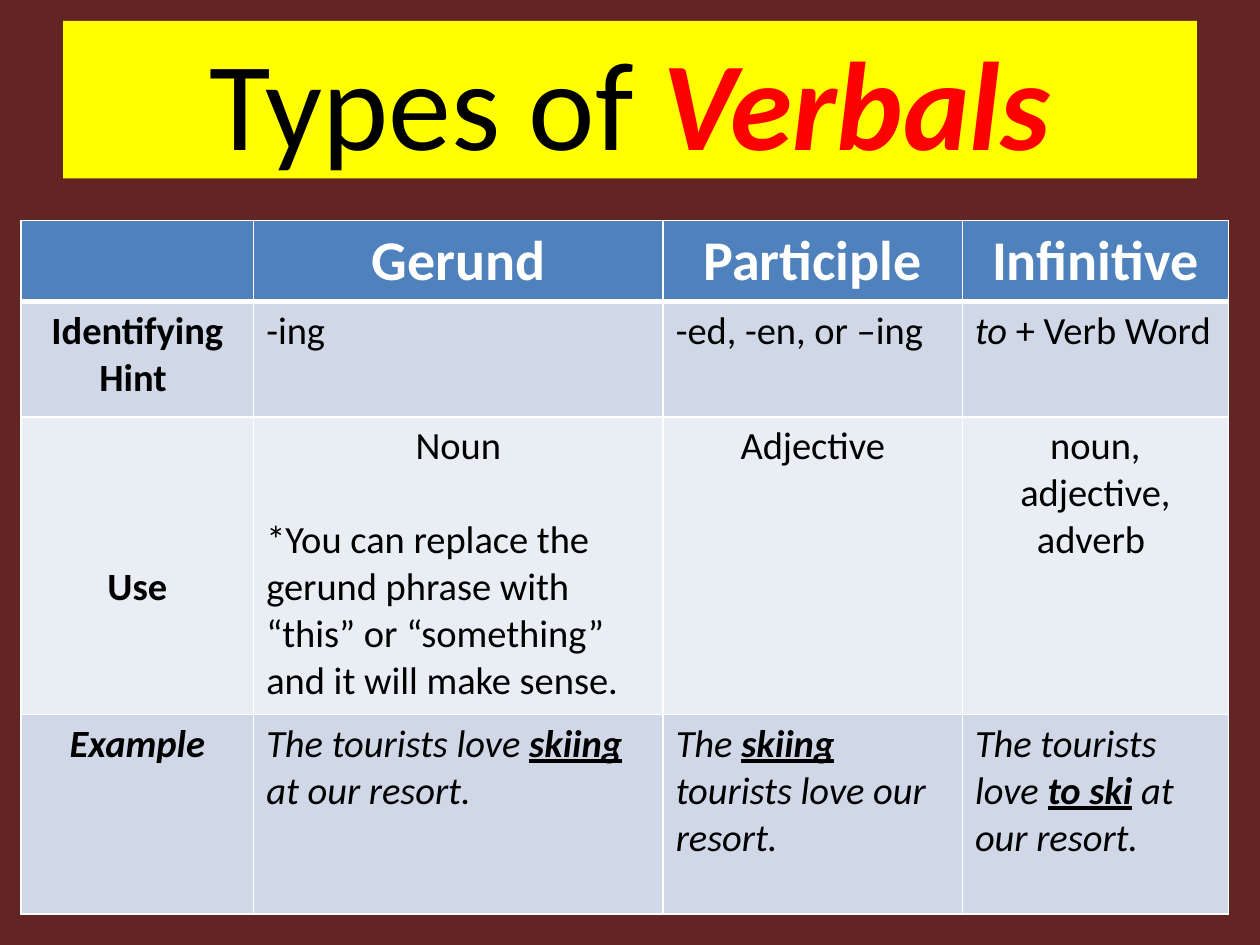
import pptx
import pptx.dml.color
import pptx.enum.text
import pptx.oxml
import pptx.oxml.ns
import pptx.util

Pt = pptx.util.Pt
RGBColor = pptx.dml.color.RGBColor
CENTER = pptx.enum.text.PP_ALIGN.CENTER
LEFT = pptx.enum.text.PP_ALIGN.LEFT
MIDDLE = pptx.enum.text.MSO_ANCHOR.MIDDLE

MAROON = RGBColor(0x63, 0x25, 0x23)
YELLOW = RGBColor(0xFF, 0xFF, 0x00)
RED = RGBColor(0xFF, 0x00, 0x00)
BLACK = RGBColor(0x00, 0x00, 0x00)
WHITE = RGBColor(0xFF, 0xFF, 0xFF)
BLUE = RGBColor(0x4F, 0x81, 0xBD)
BAND_DARK = RGBColor(0xD0, 0xD8, 0xE8)
BAND_LIGHT = RGBColor(0xE9, 0xED, 0xF4)

LINE_HEIGHT = 26.8  # one line of 22 pt body text


def add_runs(paragraph, runs, size, color):
    """Add (text, style) runs; style letters are b, i and u."""
    for text, style in runs:
        run = paragraph.add_run()
        run.text = text
        run.font.name = "Calibri"
        run.font.size = Pt(size)
        run.font.color.rgb = color
        run.font.bold = "b" in style
        run.font.italic = "i" in style
        run.font.underline = "u" in style


def set_borders(cell, widths):
    """Draw white borders; widths maps the sides L, R, T, B to points."""
    for side, width in widths.items():
        cell._tc.get_or_add_tcPr().append(pptx.oxml.parse_xml(
            f'<a:ln{side} {pptx.oxml.ns.nsdecls("a")} w="{Pt(width)}">'
            f'<a:solidFill><a:srgbClr val="{WHITE}"/></a:solidFill></a:ln{side}>'))


presentation = pptx.Presentation()
presentation.slide_width = Pt(720)
presentation.slide_height = Pt(540)
slide = presentation.slides.add_slide(presentation.slide_layouts[5])
slide.background.fill.solid()
slide.background.fill.fore_color.rgb = MAROON

title = slide.shapes.title
title.left, title.top, title.width, title.height = Pt(36), Pt(12), Pt(648), Pt(90)
title.fill.solid()
title.fill.fore_color.rgb = YELLOW
title.text_frame.vertical_anchor = MIDDLE
title.text_frame.auto_size = pptx.enum.text.MSO_AUTO_SIZE.NONE
heading = title.text_frame.paragraphs[0]
heading.alignment = CENTER
add_runs(heading, [("Types of ", "")], 72, BLACK)
add_runs(heading, [("Verbals", "bi")], 72, RED)

# Each cell is a list of paragraphs: (alignment, runs)
rows = [
    [[]] + [[(CENTER, [(verbal, "b")])] for verbal in ("Gerund", "Participle", "Infinitive")],
    [
        [(CENTER, [("Identifying Hint ", "b")])],
        [(LEFT, [("-ing", "")])],
        [(LEFT, [("-ed, -en, or –ing", "")])],
        [(LEFT, [("to ", "i"), ("+ Verb Word", "")])],
    ],
    [
        [(CENTER, [("Use", "b")])],
        [(CENTER, [("Noun", "")]),
         (LEFT, [("*You can replace the gerund phrase with “this” or “something” "
                  "and it will make sense.", "")])],
        [(CENTER, [("Adjective", "")])],
        [(CENTER, [("noun, adjective, adverb ", "")])],
    ],
    [
        [(CENTER, [("Example", "bi")])],
        [(LEFT, [("The tourists love ", "i"), ("skiing", "biu"), (" at our resort.", "i")])],
        [(LEFT, [("The ", "i"), ("skiing", "biu"), (" tourists love our resort.", "i")])],
        [(LEFT, [("The tourists love ", "i"), ("to ski", "biu"), (" at our resort.", "i")])],
    ],
]
column_widths = [133, 234, 171, 152]
row_heights = [46, 66, 170, 114]
row_fills = [BLUE, BAND_DARK, BAND_LIGHT, BAND_DARK]

verbals = slide.shapes.add_table(
    len(rows), len(column_widths), Pt(12), Pt(126),
    Pt(sum(column_widths)), Pt(sum(row_heights))).table
for column, width in zip(verbals.columns, column_widths):
    column.width = Pt(width)

for row_index, row in enumerate(rows):
    verbals.rows[row_index].height = Pt(row_heights[row_index])
    is_header = row_index == 0
    size, color = (32, WHITE) if is_header else (22, BLACK)
    for column_index, paragraphs in enumerate(row):
        cell = verbals.cell(row_index, column_index)
        set_borders(cell, {"L": 1, "R": 1, "T": 3 if row_index == 1 else 1,
                           "B": 3 if is_header else 1})
        cell.fill.solid()
        cell.fill.fore_color.rgb = row_fills[row_index]
        for index, (alignment, runs) in enumerate(paragraphs):
            frame = cell.text_frame
            paragraph = frame.add_paragraph() if index else frame.paragraphs[0]
            paragraph.alignment = alignment
            if index:
                paragraph.space_before = Pt(LINE_HEIGHT)
            add_runs(paragraph, runs, size, color)

# The "Use" label sits three lines down, beside the gerund note
verbals.cell(2, 0).margin_top = Pt(3.6 + 3 * LINE_HEIGHT)

presentation.save("out.pptx")
